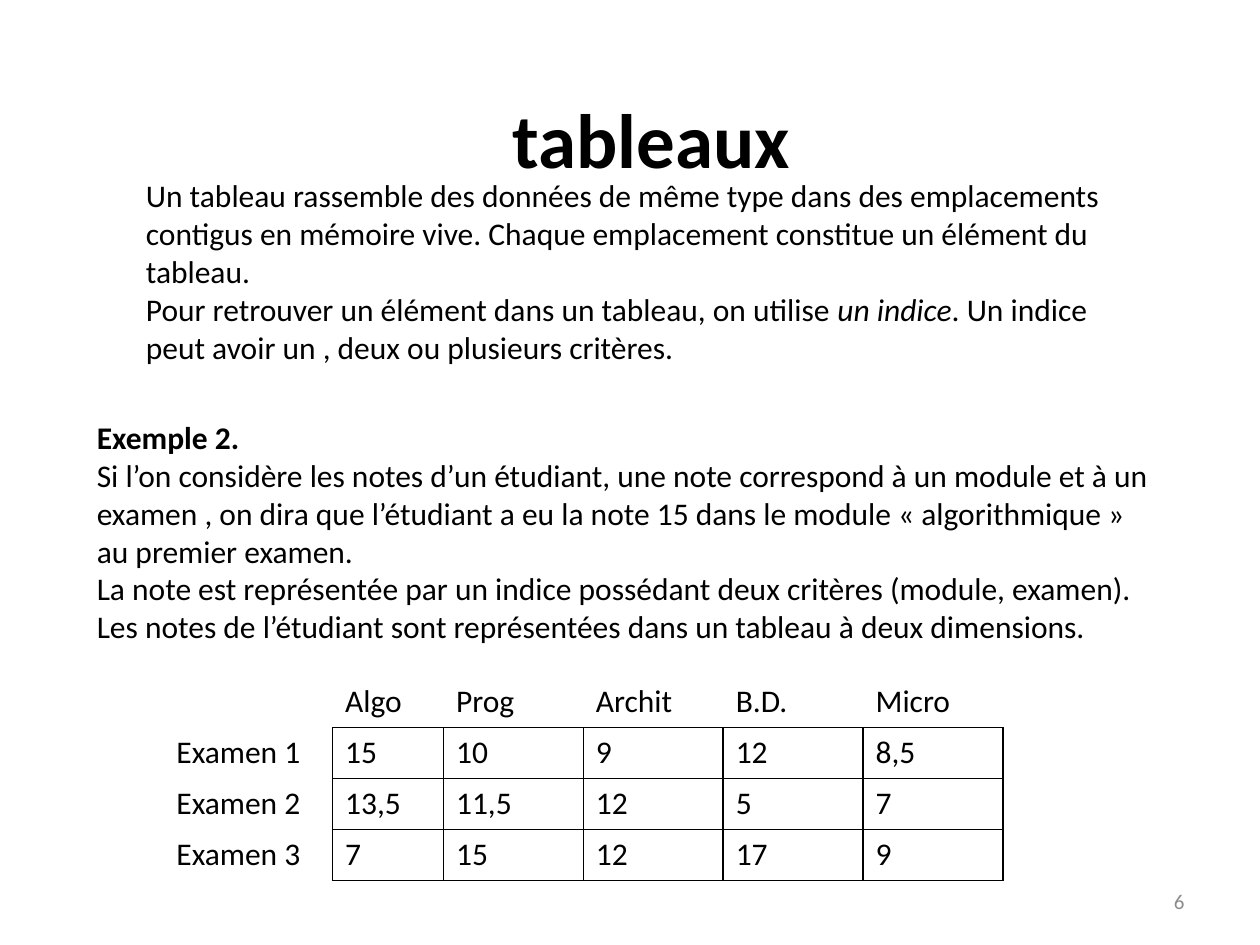
"""Build a slide that explains two-dimensional arrays with a table of marks."""

from dataclasses import dataclass

from lxml import etree
from pptx import Presentation
from pptx.dml.color import RGBColor
from pptx.enum.text import MSO_ANCHOR, PP_ALIGN
from pptx.oxml.ns import qn
from pptx.slide import Slide
from pptx.table import _Cell
from pptx.text.text import _Paragraph
from pptx.util import Inches, Pt

LEFT, CENTER, RIGHT = PP_ALIGN.LEFT, PP_ALIGN.CENTER, PP_ALIGN.RIGHT
TOP, MIDDLE = MSO_ANCHOR.TOP, MSO_ANCHOR.MIDDLE


@dataclass(frozen=True)
class Theme:
    font: str = "Calibri"
    ink: str = "000000"
    paper: str = "FFFFFF"
    muted: str = "8C8C8C"
    title_size: int = 44
    body_size: int = 18
    number_size: int = 12
    border_width: int = 1


THEME = Theme()


@dataclass(frozen=True)
class Run:
    text: str
    bold: bool = False
    italic: bool = False


@dataclass(frozen=True)
class TextBlock:
    left: float
    top: float
    width: float
    height: float
    paragraphs: list[list[Run]]
    size: int = THEME.body_size
    color: str = THEME.ink
    alignment: PP_ALIGN = LEFT
    anchor: MSO_ANCHOR = TOP


DEFINITION = TextBlock(1.06, 1.35, 7.87, 1.62, [
    [Run("Un tableau rassemble des données de même type dans des emplacements contigus "
         "en mémoire vive. Chaque emplacement constitue un élément du tableau.")],
    [Run("Pour retrouver un élément dans un tableau, on utilise "),
     Run("un indice", italic=True),
     Run(". Un indice peut avoir un , deux ou plusieurs critères.")],
])
EXAMPLE = TextBlock(0.67, 3.27, 8.66, 2.22, [
    [Run("Exemple 2.", bold=True)],
    [Run("Si l’on considère les notes d’un étudiant, une note correspond à un module et à un "
         "examen , on dira que l’étudiant a eu la note 15 dans le module « algorithmique » "
         "au premier examen.")],
    [Run("La note est représentée par un indice possédant deux critères (module, examen). "
         "Les notes de l’étudiant sont représentées dans un tableau à deux dimensions.")],
])
SLIDE_NUMBER = TextBlock(7.17, 6.95, 2.33, 0.4, [[Run("6")]], THEME.number_size,
                         THEME.muted, RIGHT, MIDDLE)
TITLE = TextBlock(0.67, 0.47, 9, 1.25, [[Run("tableaux", bold=True)]], THEME.title_size,
                  THEME.ink, CENTER, MIDDLE)

MARKS = [
    ["", "Algo", "Prog", "Archit", "B.D.", "Micro"],
    ["Examen 1", "15", "10", "9", "12", "8,5"],
    ["Examen 2", "13,5", "11,5", "12", "5", "7"],
    ["Examen 3", "7", "15", "12", "17", "9"],
]
COLUMN_WIDTHS = [1.34, 0.88] + [1.11] * 4
TABLE_LEFT, TABLE_TOP, TABLE_HEIGHT = 1.3, 5.37, 1.62


def add_run(paragraph: _Paragraph, content: Run, size: int, color: str) -> None:
    run = paragraph.add_run()
    run.text = content.text
    run.font.name = THEME.font
    run.font.size = Pt(size)
    run.font.bold = content.bold
    run.font.italic = content.italic
    run.font.color.rgb = RGBColor.from_string(color)


def add_text(slide: Slide, block: TextBlock) -> None:
    shape = slide.shapes.add_textbox(Inches(block.left), Inches(block.top),
                                     Inches(block.width), Inches(block.height))
    frame = shape.text_frame
    frame.word_wrap = True
    frame.vertical_anchor = block.anchor
    for index, runs in enumerate(block.paragraphs):
        paragraph = frame.add_paragraph() if index else frame.paragraphs[0]
        paragraph.alignment = block.alignment
        for content in runs:
            add_run(paragraph, content, block.size, block.color)


def set_borders(cell: _Cell, colors: dict[str, str]) -> None:
    properties = cell._tc.get_or_add_tcPr()
    for side, color in colors.items():
        line = etree.SubElement(properties, qn(f"a:ln{side}"), w=str(Pt(THEME.border_width)))
        fill = etree.SubElement(line, qn("a:solidFill"))
        etree.SubElement(fill, qn("a:srgbClr"), val=color)


def border_colors(row: int, column: int) -> dict[str, str]:
    """Return ink for each side that touches a mark, and paper for the others."""
    def is_mark(row: int, column: int) -> bool:
        return 0 < row < len(MARKS) and 0 < column < len(COLUMN_WIDTHS)

    neighbors = {"L": (row, column - 1), "R": (row, column + 1),
                 "T": (row - 1, column), "B": (row + 1, column)}
    return {side: THEME.ink if is_mark(row, column) or is_mark(*neighbor) else THEME.paper
            for side, neighbor in neighbors.items()}


def add_marks_table(slide: Slide) -> None:
    table = slide.shapes.add_table(
        len(MARKS), len(COLUMN_WIDTHS), Inches(TABLE_LEFT), Inches(TABLE_TOP),
        Inches(sum(COLUMN_WIDTHS)), Inches(TABLE_HEIGHT)).table
    table.first_row = False
    table.horz_banding = False
    for column, width in zip(table.columns, COLUMN_WIDTHS):
        column.width = Inches(width)
    for row_index, row in enumerate(MARKS):
        for column_index, text in enumerate(row):
            cell = table.cell(row_index, column_index)
            set_borders(cell, border_colors(row_index, column_index))
            cell.fill.background()
            if text:
                add_run(cell.text_frame.paragraphs[0], Run(text), THEME.body_size, THEME.ink)


def main() -> None:
    presentation = Presentation()
    presentation.slide_width = Inches(10)
    presentation.slide_height = Inches(7.5)
    slide = presentation.slides.add_slide(presentation.slide_layouts[6])
    add_text(slide, DEFINITION)
    add_text(slide, EXAMPLE)
    add_marks_table(slide)
    add_text(slide, SLIDE_NUMBER)
    add_text(slide, TITLE)
    presentation.save("out.pptx")


if __name__ == "__main__":
    main()
